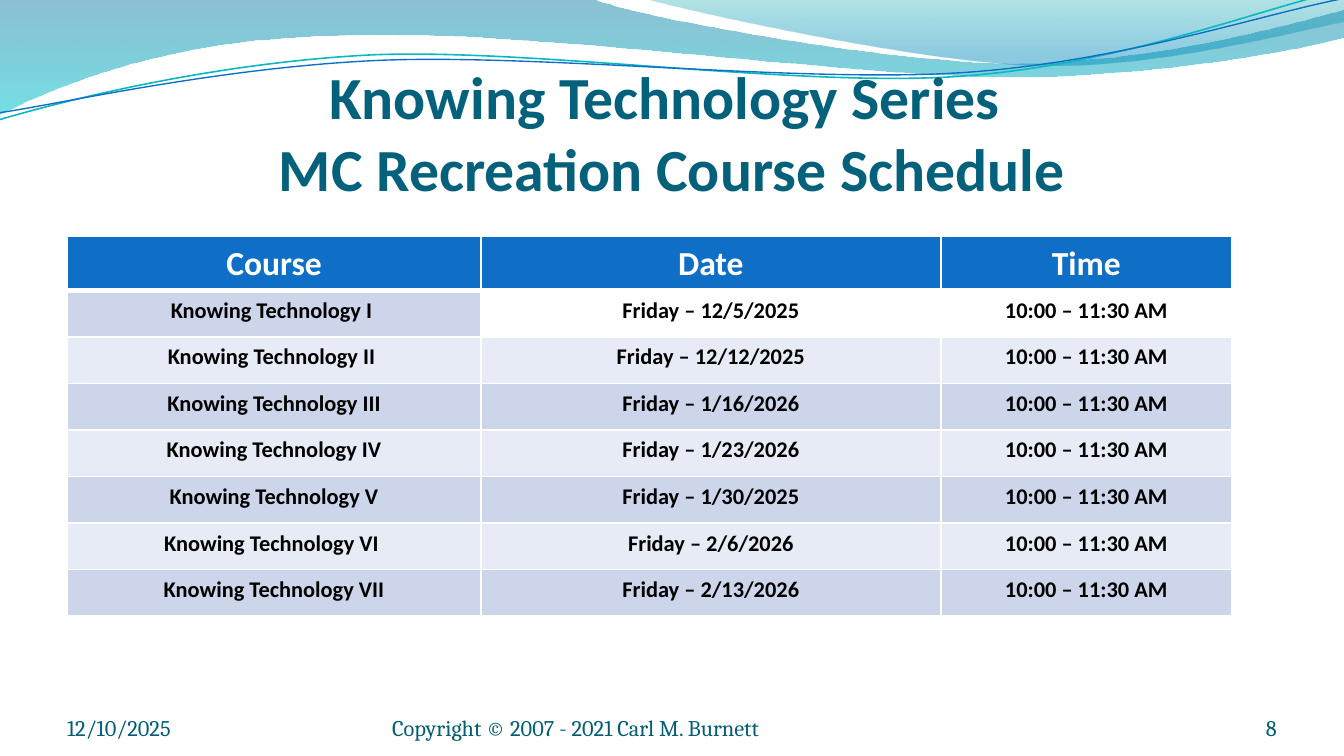
from lxml import etree
from pptx import Presentation
from pptx.dml.color import RGBColor
from pptx.enum.text import MSO_ANCHOR, PP_ALIGN
from pptx.oxml.ns import qn
from pptx.util import Cm, Pt

LEFT, CENTER, RIGHT = PP_ALIGN.LEFT, PP_ALIGN.CENTER, PP_ALIGN.RIGHT
BOTTOM = MSO_ANCHOR.BOTTOM

WHITE = RGBColor(0xFF, 0xFF, 0xFF)
BLACK = RGBColor(0, 0, 0)
BLUE = RGBColor(0x0F, 0x6F, 0xC6)
TEAL = RGBColor(0x0A, 0xB8, 0xBF)
TITLE_COLOR = RGBColor(0x04, 0x61, 0x7B)
FOOTER_COLOR = RGBColor(0x04, 0x5D, 0x75)
BAND_DARK = RGBColor(0xCC, 0xD5, 0xEA)
BAND_LIGHT = RGBColor(0xE7, 0xEB, 0xF5)

# Gradient stops: position, colour, opacity in percent
BACK_WAVE_STOPS = [(0, RGBColor(0x00, 0x74, 0xA1), 45),
                   (1, RGBColor(0x00, 0xC6, 0xCF), 55)]
FRONT_WAVE_STOPS = [(0, RGBColor(0x00, 0xA1, 0xA9), 30),
                    (0.8, RGBColor(0x00, 0x8B, 0xBF), 45)]

# Outlines in cm: a start point, then line ends (2 numbers) or Bezier curves (6)
BACK_WAVE = [(0, 0), (11.18, -0.03),
             (12.09, 0.33, 16.87, 1.19, 19.25, 1.19),
             (21.67, 1.19, 24.33, 0.48, 25.4, 0.18), (25.43, 0.69),
             (24.97, 0.84, 22.1, 1.45, 18.95, 1.45),
             (15.8, 1.42, 9.7, 0.53, 6.53, 0.66),
             (3.28, 0.69, 1.17, 1.57, -0.03, 2.16)]
FRONT_WAVE = [(12.17, -0.03), (12.93, 0.2, 17.32, 1.17, 19.53, 1.24),
              (21.74, 1.32, 24.41, 0.61, 25.4, 0.41), (25.4, 0)]
# The two thin curves are given before their rotation
TEAL_CURVE = [(-0.04, 1.66), (1.19, 1.36, 4.02, 0.78, 7.05, 0.77),
              (10.07, 0.79, 15.01, 1.76, 18.06, 1.7),
              (21.14, 1.64, 23.88, 0.68, 25.4, 0.42)]
BLUE_CURVE = [(-0.03, 1.53), (1.17, 1.41, 4.17, 0.87, 7.19, 0.88),
              (10.24, 0.9, 15.14, 1.69, 18.19, 1.63),
              (21.22, 1.57, 23.93, 0.78, 25.44, 0.57)]
CURVE_ROTATION = 357.3

COLUMN_WIDTHS = [7.82, 8.69, 5.5]
ROW_HEIGHT = 0.88
HEADER = ("Course", "Date", "Time")
TIME = "10:00 – 11:30 AM"
COURSES = [("Knowing Technology I ", "Friday – 12/5/2025"),
           ("Knowing Technology II ", "Friday – 12/12/2025"),
           ("Knowing Technology III", "Friday – 1/16/2026"),
           ("Knowing Technology IV", "Friday – 1/23/2026"),
           ("Knowing Technology V", "Friday – 1/30/2025"),
           ("Knowing Technology VI ", "Friday – 2/6/2026"),
           ("Knowing Technology VII", "Friday – 2/13/2026")]


def add_outline(s, outline, close):
    """Build a freeform, then merge each curve's three points into a Bezier."""
    points = [(Cm(step[i]), Cm(step[i + 1]))
              for step in outline for i in range(0, len(step), 2)]
    builder = s.shapes.build_freeform(*points[0])
    builder.add_line_segments(points[1:], close=close)
    sp = builder.convert_to_shape()
    sp.shadow.inherit = False
    segments = iter(list(sp._element.iter(qn("a:lnTo"))))
    for step in outline[1:]:
        segment = next(segments)
        if len(step) == 6:
            curve = etree.Element(qn("a:cubicBezTo"))
            segment.addprevious(curve)
            for line in (segment, next(segments), next(segments)):
                curve.append(line[0])
                line.getparent().remove(line)
    return sp


def add_wave(s, outline, stops):
    sp = add_outline(s, outline, True)
    sp.line.fill.background()
    sp.fill.gradient()
    sp.fill.gradient_angle = 270
    for stop, (position, color, _) in zip(sp.fill.gradient_stops, stops):
        stop.position = position
        stop.color.rgb = color
    colors = sp._element.spPr.iter(qn("a:srgbClr"))
    for node, (_, _, opacity) in zip(list(colors), stops):
        etree.SubElement(node, qn("a:alpha"), val=str(opacity * 1000))


def add_curve(s, outline, color, width):
    sp = add_outline(s, outline, False)
    sp.rotation = CURVE_ROTATION
    sp.fill.background()
    sp.line.color.rgb = color
    sp.line.width = Pt(width)


def style_paragraph(p, font, size, color, align, bold=False):
    p.alignment = align
    p.font.name = font
    p.font.size = Pt(size)
    p.font.bold = bold
    p.font.color.rgb = color


def add_text(s, text, box, *style):
    tf = s.shapes.add_textbox(*(Cm(v) for v in box)).text_frame
    tf.word_wrap = True
    tf.vertical_anchor = BOTTOM
    tf.margin_left = tf.margin_top = tf.margin_right = tf.margin_bottom = 0
    tf.text = text
    style_paragraph(tf.paragraphs[0], *style)


def set_borders(cell, top, bottom):
    """Draw white borders; top and bottom are widths in points."""
    tc_pr = cell._tc.get_or_add_tcPr()
    widths = {"a:lnL": 1, "a:lnR": 1, "a:lnT": top, "a:lnB": bottom}
    for i, (tag, width) in enumerate(widths.items()):
        ln = etree.Element(qn(tag), w=str(Pt(width)))
        fill = etree.SubElement(ln, qn("a:solidFill"))
        etree.SubElement(fill, qn("a:srgbClr"), val=str(WHITE))
        tc_pr.insert(i, ln)


def cell_fill(row, col):
    if row == 0:
        return BLUE
    if row == 1 and col > 0:
        return None
    return BAND_DARK if row % 2 else BAND_LIGHT


def add_schedule(s):
    rows = [HEADER] + [(course, date, TIME) for course, date in COURSES]
    table = s.shapes.add_table(len(rows), len(HEADER), Cm(1.27), Cm(4.47),
                               Cm(sum(COLUMN_WIDTHS)),
                               Cm(ROW_HEIGHT * len(rows))).table
    for column, width in zip(table.columns, COLUMN_WIDTHS):
        column.width = Cm(width)
    for r, values in enumerate(rows):
        table.rows[r].height = Cm(ROW_HEIGHT)
        size, color = (18, WHITE) if r == 0 else (12, BLACK)
        for c, value in enumerate(values):
            cell = table.cell(r, c)
            cell.text = value
            style_paragraph(cell.text_frame.paragraphs[0],
                            "Calibri", size, color, CENTER, True)
            fill = cell_fill(r, c)
            if fill is None:
                cell.fill.background()
            else:
                cell.fill.solid()
                cell.fill.fore_color.rgb = fill
            set_borders(cell, 3 if r == 1 else 1, 3 if r == 0 else 1)


def main():
    prs = Presentation()
    prs.slide_width, prs.slide_height = Cm(25.4), Cm(14.29)
    s = prs.slides.add_slide(prs.slide_layouts[6])

    add_wave(s, BACK_WAVE, BACK_WAVE_STOPS)
    add_wave(s, FRONT_WAVE, FRONT_WAVE_STOPS)
    add_curve(s, TEAL_CURVE, TEAL, 0.85)
    add_curve(s, BLUE_CURVE, BLUE, 0.75)

    add_text(s, "Knowing Technology Series \vMC Recreation Course Schedule",
             (1.27, 1.46, 22.86, 2.39), "Calibri", 32, TITLE_COLOR, CENTER, True)
    add_schedule(s)

    for text, left, width, align in (
            ("12/10/2025", 1.27, 5.93, LEFT),
            ("Copyright © 2007 - 2021 Carl M. Burnett", 7.41, 9.31, LEFT),
            ("8", 22.01, 2.12, RIGHT)):
        add_text(s, text, (left, 13.24, width, 0.76),
                 "Cambria", 12, FOOTER_COLOR, align)

    prs.save("out.pptx")


if __name__ == "__main__":
    main()
